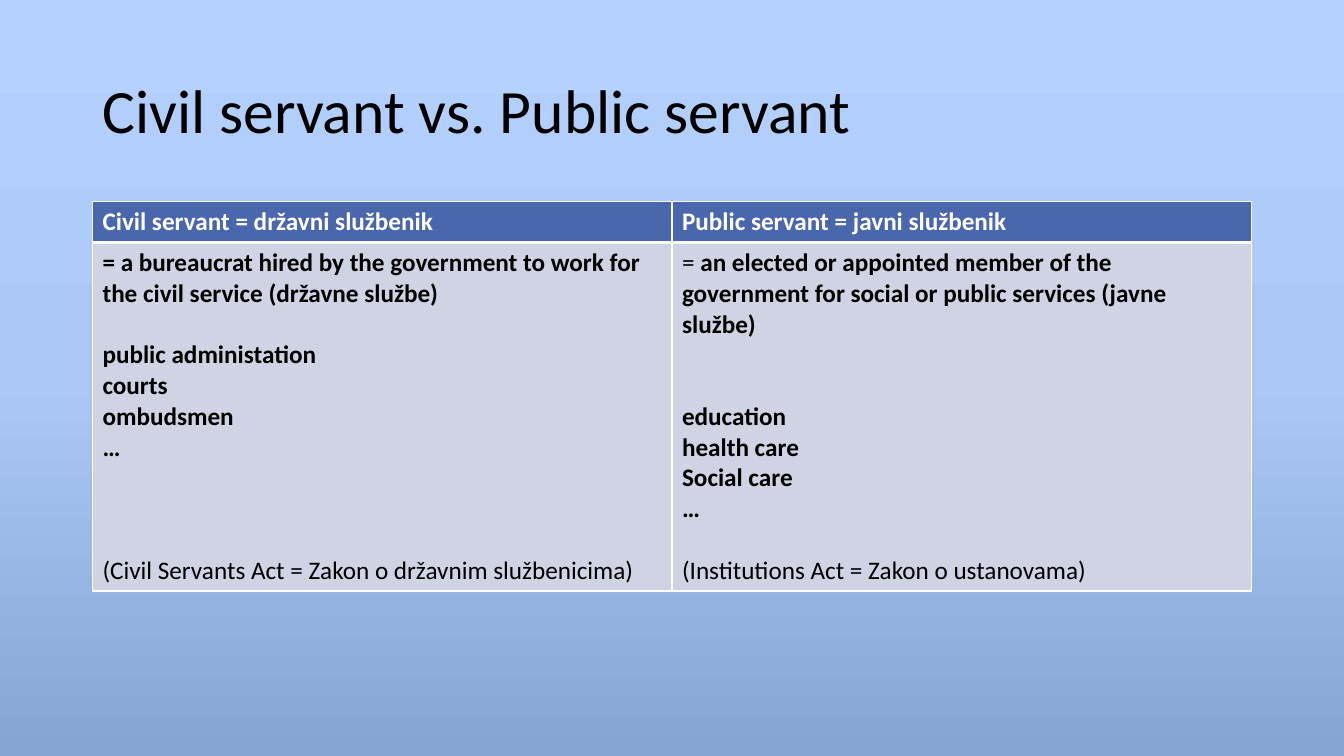
import copy

import pptx
import pptx.dml.color
import pptx.enum.text
import pptx.oxml
import pptx.oxml.ns
import pptx.util

Cm = pptx.util.Cm
Pt = pptx.util.Pt
RGBColor = pptx.dml.color.RGBColor
qn = pptx.oxml.ns.qn

BLACK = RGBColor(0x00, 0x00, 0x00)
WHITE = RGBColor(0xFF, 0xFF, 0xFF)
HEADER_BLUE = RGBColor(0x4A, 0x66, 0xAC)
BODY_GREY = RGBColor(0xD0, 0xD3, 0xE3)
SKY = [
    (0, RGBColor(0xB5, 0xD1, 0xFD)),
    (0.5, RGBColor(0xAC, 0xC9, 0xF5)),
    (1, RGBColor(0x86, 0xA5, 0xD2)),
]

LEFT, WIDTH = Cm(2.33), Cm(29.21)
ROW_HEIGHTS = [Cm(1.03), Cm(8.78)]
LINE_PITCH = 21.97

HEADINGS = ["Civil servant = državni službenik", "Public servant = javni službenik"]
DEFINITIONS = [
    [
        (0, [("= a bureaucrat hired by the government to work for the civil service (državne službe)", True)]),
        (1, [("public administation", True)]),
        (0, [("courts", True)]),
        (0, [("ombudsmen", True)]),
        (0, [("…", True)]),
        (3, [("(Civil Servants Act = Zakon o državnim službenicima)", False)]),
    ],
    [
        (0, [("= ", False),
             ("an elected or appointed member of the government for social or public services (javne službe)", True)]),
        (2, [("education", True)]),
        (0, [("health care", True)]),
        (0, [("Social care", True)]),
        (0, [("…", True)]),
        (1, [("(Institutions Act = Zakon o ustanovama)", False)]),
    ],
]


class SlideBuilder:
    font_name = "Calibri"

    def __init__(self, slide):
        self.slide = slide

    def apply(self, target, formats):
        for name, value in formats.items():
            setattr(target, name, value)

    def add_text(self, paragraph, text, size, color, bold=False):
        run = paragraph.add_run()
        run.text = text
        self.apply(run.font, {"name": self.font_name, "size": Pt(size), "bold": bold})
        run.font.color.rgb = color

    def background(self, stops, angle):
        fill = self.slide.background.fill
        fill.gradient()
        fill.gradient_angle = angle
        last = list(self.slide.element.iter(qn("a:gs")))[-1]
        last.addnext(copy.deepcopy(last))
        for stop, (position, color) in zip(fill.gradient_stops, stops):
            stop.position = position
            stop.color.rgb = color

    def title(self, text, top, height):
        title = self.slide.shapes.title
        self.apply(title, {"left": LEFT, "top": top, "width": WIDTH, "height": height})
        self.apply(title.text_frame, {
            "word_wrap": True,
            "auto_size": pptx.enum.text.MSO_AUTO_SIZE.NONE,
            "vertical_anchor": pptx.enum.text.MSO_ANCHOR.MIDDLE,
        })
        paragraph = title.text_frame.paragraphs[0]
        self.apply(paragraph, {"alignment": pptx.enum.text.PP_ALIGN.LEFT, "line_spacing": 0.9})
        self.add_text(paragraph, text, 44, BLACK)

    def borders(self, cell, widths):
        properties = cell._tc.get_or_add_tcPr()
        for index, (side, width) in enumerate(widths.items()):
            properties.insert(index, pptx.oxml.parse_xml(
                f'<a:ln{side} {pptx.oxml.ns.nsdecls("a")} w="{Pt(width)}">'
                f'<a:solidFill><a:srgbClr val="{WHITE}"/></a:solidFill></a:ln{side}>'
            ))

    def cell(self, cell, paragraphs, fill, color, borders):
        cell.fill.solid()
        cell.fill.fore_color.rgb = fill
        self.borders(cell, borders)
        frame = cell.text_frame
        for index, (blank_lines, runs) in enumerate(paragraphs):
            paragraph = frame.add_paragraph() if index else frame.paragraphs[0]
            if blank_lines:
                paragraph.space_before = Pt(blank_lines * LINE_PITCH)
            for text, bold in runs:
                self.add_text(paragraph, text, 18, color, bold)

    def comparison(self, headings, definitions, top):
        table = self.slide.shapes.add_table(
            2, len(headings), LEFT, top, WIDTH, sum(ROW_HEIGHTS)
        ).table
        self.apply(table, {"first_row": True, "horz_banding": False})
        for row, height in zip(table.rows, ROW_HEIGHTS):
            row.height = height
        for column, (heading, definition) in enumerate(zip(headings, definitions)):
            self.cell(table.cell(0, column), [(0, [(heading, True)])], HEADER_BLUE, WHITE,
                      {"L": 1, "R": 1, "T": 1, "B": 3})
            self.cell(table.cell(1, column), definition, BODY_GREY, BLACK,
                      {"L": 1, "R": 1, "T": 3, "B": 1})


def main():
    presentation = pptx.Presentation()
    presentation.slide_width = Cm(33.87)
    presentation.slide_height = Cm(19.05)
    builder = SlideBuilder(presentation.slides.add_slide(presentation.slide_layouts[5]))
    builder.background(SKY, 270)
    builder.title("Civil servant vs. Public servant", Cm(1.01), Cm(3.68))
    builder.comparison(HEADINGS, DEFINITIONS, Cm(5.08))
    presentation.save("out.pptx")


if __name__ == "__main__":
    main()
